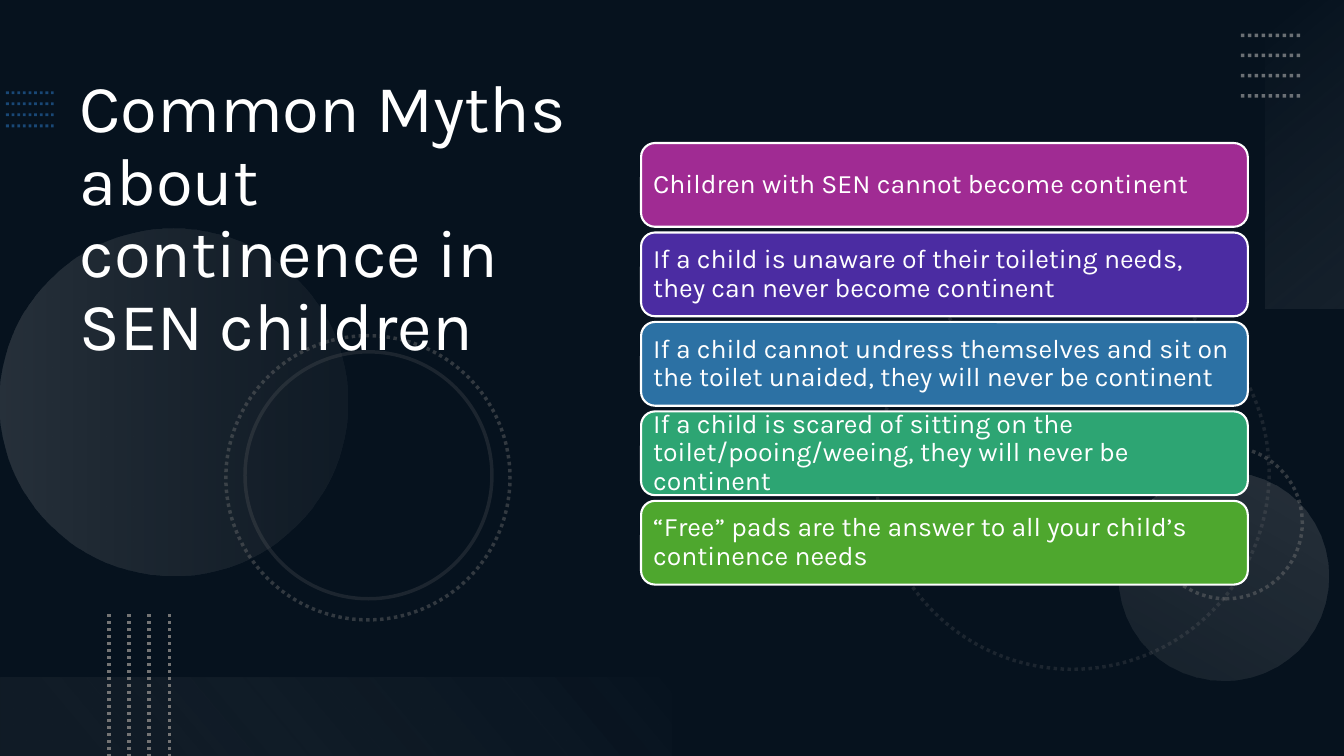
from dataclasses import dataclass
from lxml.etree import SubElement
from pptx import Presentation
from pptx.dml.color import RGBColor as RGB
from pptx.enum.dml import MSO_LINE as Dash
from pptx.enum.shapes import MSO_CONNECTOR as Link, MSO_SHAPE as Kind
from pptx.enum.text import MSO_ANCHOR as Anchor, PP_ALIGN as Align
from pptx.oxml.ns import qn
from pptx.util import Pt


@dataclass(frozen=True)
class Theme:
    font: str = "Karla"
    title: int = 48
    body: int = 19
    navy: str = "0E2841"
    black: str = "000000"
    white: str = "FFFFFF"
    blue: str = "2D7FCF"
    gray: str = "747474"
    silver: str = "AEAEAE"
    pale: str = "F6F6F6"
    cards: tuple = ("A02B93", "4B2CA2", "2C71A4", "2DA573", "4EA72E")


MYTHS = (
    "Children with SEN cannot become continent",
    "If a child is unaware of their toileting needs, they can never become continent",
    "If a child cannot undress themselves and sit on the toilet unaided, they will never be continent",
    "If a child is scared of sitting on the toilet/pooing/weeing, they will never be continent",
    "“Free” pads are the answer to all your child’s continence needs",
)


def fade(item, *alphas):
    """Set the opacity in percent of each colour, fill colours before the line."""
    for color, alpha in zip(item._element.spPr.iter(qn("a:srgbClr")), alphas):
        SubElement(color, qn("a:alpha")).set("val", str(alpha * 1000))


class Painter:
    def __init__(self, slide, theme):
        self.slide = slide
        self.theme = theme
        back = slide.background.fill
        back.solid()
        back.fore_color.rgb = RGB.from_string(theme.navy)

    def shape(self, kind, x, y, w, h, turn=0):
        item = self.slide.shapes.add_shape(kind, Pt(x), Pt(y), Pt(w), Pt(h))
        item.shadow.inherit = False
        item.rotation = turn
        item.line.fill.background()
        return item

    def solid(self, kind, x, y, w, h, color):
        item = self.shape(kind, x, y, w, h)
        item.fill.solid()
        item.fill.fore_color.rgb = RGB.from_string(color)
        return item

    def stroke(self, item, color, width, dash=None):
        item.line.color.rgb = RGB.from_string(color)
        item.line.width = Pt(width)
        if dash:
            item.line.dash_style = dash

    def blend(self, kind, x, y, w, h, turn, angle, *stops):
        """Draw a shape with a gradient; each stop is (place, colour, opacity)."""
        item = self.shape(kind, x, y, w, h, turn)
        item.fill.gradient()
        item.fill.gradient_angle = 360 - angle
        for stop, (place, color, _) in zip(item.fill.gradient_stops, stops):
            stop.position = place
            stop.color.rgb = RGB.from_string(color)
        fade(item, *(alpha for _, _, alpha in stops))

    def ring(self, x, y, size, turn, alpha, dash=Dash.ROUND_DOT):
        item = self.shape(Kind.OVAL, x, y, size, size, turn)
        item.fill.background()
        self.stroke(item, self.theme.gray, 2.5, dash)
        fade(item, alpha)

    def dots(self, x, y, dx, dy, gap, color, width, alpha):
        """Draw four parallel dotted lines, stacked across their own direction."""
        for i in range(4):
            left, top = (x, y + i * gap) if dx else (x + i * gap, y)
            line = self.slide.shapes.add_connector(
                Link.STRAIGHT, Pt(left), Pt(top), Pt(left + dx), Pt(top + dy))
            self.stroke(line, color, width, Dash.ROUND_DOT)
            SubElement(line._element.spPr, qn("a:effectLst"))
            fade(line, alpha)

    def label(self, frame, text, size):
        frame.word_wrap = True
        para = frame.paragraphs[0]
        para.text = text
        para.alignment = Align.LEFT
        para.line_spacing = 0.9
        para.font.name = self.theme.font
        para.font.size = Pt(size)
        para.font.color.rgb = RGB.from_string(self.theme.white)

    def title(self, x, y, w, h, text):
        box = self.slide.shapes.add_textbox(Pt(x), Pt(y), Pt(w), Pt(h))
        self.label(box.text_frame, text, self.theme.title)

    def card(self, x, y, w, h, color, text):
        item = self.solid(Kind.ROUNDED_RECTANGLE, x, y, w, h, color)
        self.stroke(item, self.theme.white, 1.5)
        frame = item.text_frame
        frame.margin_left = frame.margin_right = Pt(5.76)
        frame.margin_top = frame.margin_bottom = Pt(5.76)
        frame.vertical_anchor = Anchor.MIDDLE
        self.label(frame, text, self.theme.body)


def main():
    deck = Presentation()
    deck.slide_width, deck.slide_height = Pt(960), Pt(540)
    theme = Theme()
    art = Painter(deck.slides.add_slide(deck.slide_layouts[6]), theme)

    fade(art.solid(Kind.RECTANGLE, 0, 0, 960, 540, theme.black), 53)
    art.dots(4.3, 66.2, 34, 0, 7.9, theme.blue, 2, 50)

    art.ring(625.7, 197.3, 280.8, 75, 20)
    art.ring(821.5, 319, 108.7, 270, 40)
    art.blend(Kind.OVAL, 0, 163.2, 248, 248, 270, 90,
              (0, theme.silver, 20), (1, theme.gray, 10))
    art.blend(Kind.OVAL, 799.2, 336.5, 149.8, 149.8, 210, 90,
              (0, theme.silver, 10), (1, theme.silver, 20))
    art.ring(161.3, 239.8, 203, 75, 40)
    art.ring(175, 251.3, 176.4, 75, 20, Dash.SOLID)

    art.blend(Kind.RECTANGLE, 822, 82.1, 220.3, 56.2, 270, 140,
              (0, theme.pale, 0), (1, theme.silver, 10))
    art.dots(886.3, 25.2, 43.2, 0, 14.4, theme.silver, 2.5, 60)
    art.blend(Kind.RECTANGLE, 0, 483.8, 480, 56.2, 180, 140,
              (0.1, theme.gray, 10), (1, theme.pale, 0))
    art.dots(77.8, 438.5, 0, 101.5, 14.4, theme.gray, 2.5, 100)

    art.title(49.7, 49.7, 389.5, 434.2,
              "Common Myths about\ncontinence in SEN children")
    for i, (color, myth) in enumerate(zip(theme.cards, MYTHS)):
        art.card(457.9, 102.2 + i * 63.9, 433.4, 59.8, color, myth)

    deck.save("out.pptx")


if __name__ == "__main__":
    main()
